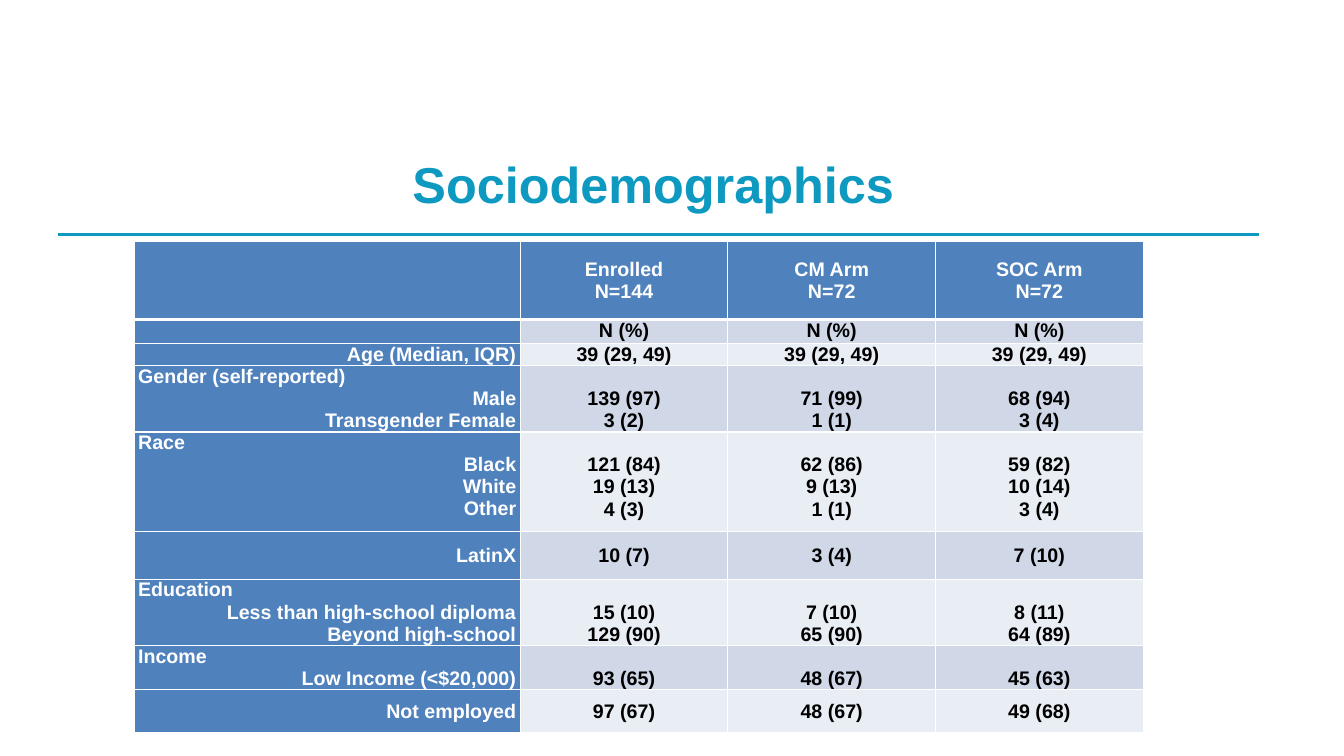
from dataclasses import dataclass

from lxml.etree import SubElement
from pptx import Presentation
from pptx.dml.color import RGBColor
from pptx.enum.shapes import MSO_CONNECTOR
from pptx.enum.text import MSO_ANCHOR, PP_ALIGN
from pptx.oxml.ns import qn
from pptx.util import Inches, Pt


@dataclass(frozen=True)
class Theme:
    font: str = "Arial"
    accent: str = "0E99C0"
    header: str = "4F81BD"
    bands: tuple = ("D0D8E8", "E9EDF4")
    light: str = "FFFFFF"
    dark: str = "000000"
    title_size: int = 36
    table_size: int = 14


THEME = Theme()
WIDTH, HEIGHT = Inches(13.33), Inches(7.5)
LINE_HEIGHT = Inches(0.22)
SIDE_INSET = Inches(0.04)
COLUMN_SHARES = (28.73, 15.45, 15.45, 15.45)
HEADER_SHARE = 10.4
HEADER = ("", "Enrolled\nN=144", "CM Arm\nN=72", "SOC Arm\nN=72")


@dataclass(frozen=True)
class Group:
    share: float
    labels: str
    values: tuple
    heading: str = ""
    anchor: MSO_ANCHOR = MSO_ANCHOR.TOP


GROUPS = (
    Group(2.8, "", ("N (%)",) * 3),
    Group(2.8, "Age (Median, IQR)", ("39 (29, 49)",) * 3),
    Group(8.8, "Male\nTransgender Female",
          ("139 (97)\n3 (2)", "71 (99)\n1 (1)", "68 (94)\n3 (4)"),
          heading="Gender (self-reported)"),
    Group(13.2, "Black\nWhite\nOther",
          ("121 (84)\n19 (13)\n4 (3)", "62 (86)\n9 (13)\n1 (1)",
           "59 (82)\n10 (14)\n3 (4)"),
          heading="Race"),
    Group(6.27, "LatinX", ("10 (7)", "3 (4)", "7 (10)"),
          anchor=MSO_ANCHOR.MIDDLE),
    Group(8.53, "Less than high-school diploma\nBeyond high-school",
          ("15 (10)\n129 (90)", "7 (10)\n65 (90)", "8 (11)\n64 (89)"),
          heading="Education"),
    Group(5.73, "Low Income (<$20,000)", ("93 (65)", "48 (67)", "45 (63)"),
          heading="Income"),
    Group(5.73, "Not employed", ("97 (67)", "48 (67)", "49 (68)"),
          anchor=MSO_ANCHOR.MIDDLE),
)


def across(percent):
    return round(WIDTH * percent / 100)


def down(percent):
    return round(HEIGHT * percent / 100)


def write_text(text_frame, text, *, size, color, align, heading=""):
    lines = [(heading, PP_ALIGN.LEFT)] if heading else []
    lines += [(line, align) for line in text.split("\n")]
    for index, (line, alignment) in enumerate(lines):
        paragraph = text_frame.paragraphs[0] if index == 0 else text_frame.add_paragraph()
        paragraph.alignment = alignment
        if not line:
            SubElement(paragraph._p, qn("a:endParaRPr"), sz=str(size * 100))
            continue
        run = paragraph.add_run()
        run.text = line
        run.font.name = THEME.font
        run.font.size = Pt(size)
        run.font.bold = True
        run.font.color.rgb = RGBColor.from_string(color)


def add_title(slide, text):
    title = slide.shapes.title
    title.left, title.top = across(3.53), down(17.33)
    title.width, title.height = across(90.17), down(13.73)
    title.text_frame.word_wrap = True
    title.text_frame.vertical_anchor = MSO_ANCHOR.MIDDLE
    write_text(title.text_frame, text, size=THEME.title_size,
               color=THEME.accent, align=PP_ALIGN.CENTER)


def add_rule(slide):
    rule = slide.shapes.add_connector(
        MSO_CONNECTOR.STRAIGHT, across(4.35), down(31.07), across(93.7), down(31.07))
    rule.line.color.rgb = RGBColor.from_string(THEME.accent)
    rule.line.width = Pt(2)
    SubElement(rule._element.spPr, qn("a:effectLst"))


def set_borders(cell, top=1, bottom=1):
    properties = cell._tc.get_or_add_tcPr()
    for side, width in (("L", 1), ("R", 1), ("T", top), ("B", bottom)):
        border = SubElement(properties, qn(f"a:ln{side}"), w=str(Pt(width)))
        fill = SubElement(border, qn("a:solidFill"))
        SubElement(fill, qn("a:srgbClr"), val=THEME.light)


def fill_cell(cell, text, *, fill, color, align=PP_ALIGN.CENTER,
              anchor=MSO_ANCHOR.TOP, heading="", top_inset=0, top=1, bottom=1):
    set_borders(cell, top, bottom)
    cell.fill.solid()
    cell.fill.fore_color.rgb = RGBColor.from_string(fill)
    cell.margin_left = cell.margin_right = SIDE_INSET
    cell.margin_top, cell.margin_bottom = top_inset, 0
    cell.vertical_anchor = anchor
    write_text(cell.text_frame, text, size=THEME.table_size,
               color=color, align=align, heading=heading)


def add_demographics_table(slide):
    row_shares = [HEADER_SHARE] + [group.share for group in GROUPS]
    table = slide.shapes.add_table(
        len(row_shares), len(COLUMN_SHARES), across(9.98), down(31.87),
        across(sum(COLUMN_SHARES)), down(sum(row_shares))).table
    for column, share in zip(table.columns, COLUMN_SHARES):
        column.width = across(share)
    for row, share in zip(table.rows, row_shares):
        row.height = down(share)
    for column, text in enumerate(HEADER):
        fill_cell(table.cell(0, column), text, fill=THEME.header,
                  color=THEME.light, anchor=MSO_ANCHOR.MIDDLE, bottom=3)
    for row, group in enumerate(GROUPS, start=1):
        top = 3 if row == 1 else 1
        fill_cell(table.cell(row, 0), group.labels, fill=THEME.header,
                  color=THEME.light, align=PP_ALIGN.RIGHT, anchor=group.anchor,
                  heading=group.heading, top=top)
        for column, text in enumerate(group.values, start=1):
            fill_cell(table.cell(row, column), text,
                      fill=THEME.bands[(row - 1) % 2], color=THEME.dark,
                      anchor=group.anchor, top=top,
                      top_inset=LINE_HEIGHT if group.heading else 0)


def main():
    presentation = Presentation()
    presentation.slide_width, presentation.slide_height = WIDTH, HEIGHT
    slide = presentation.slides.add_slide(presentation.slide_layouts[5])
    add_title(slide, "Sociodemographics")
    add_rule(slide)
    add_demographics_table(slide)
    presentation.save("out.pptx")


if __name__ == "__main__":
    main()
